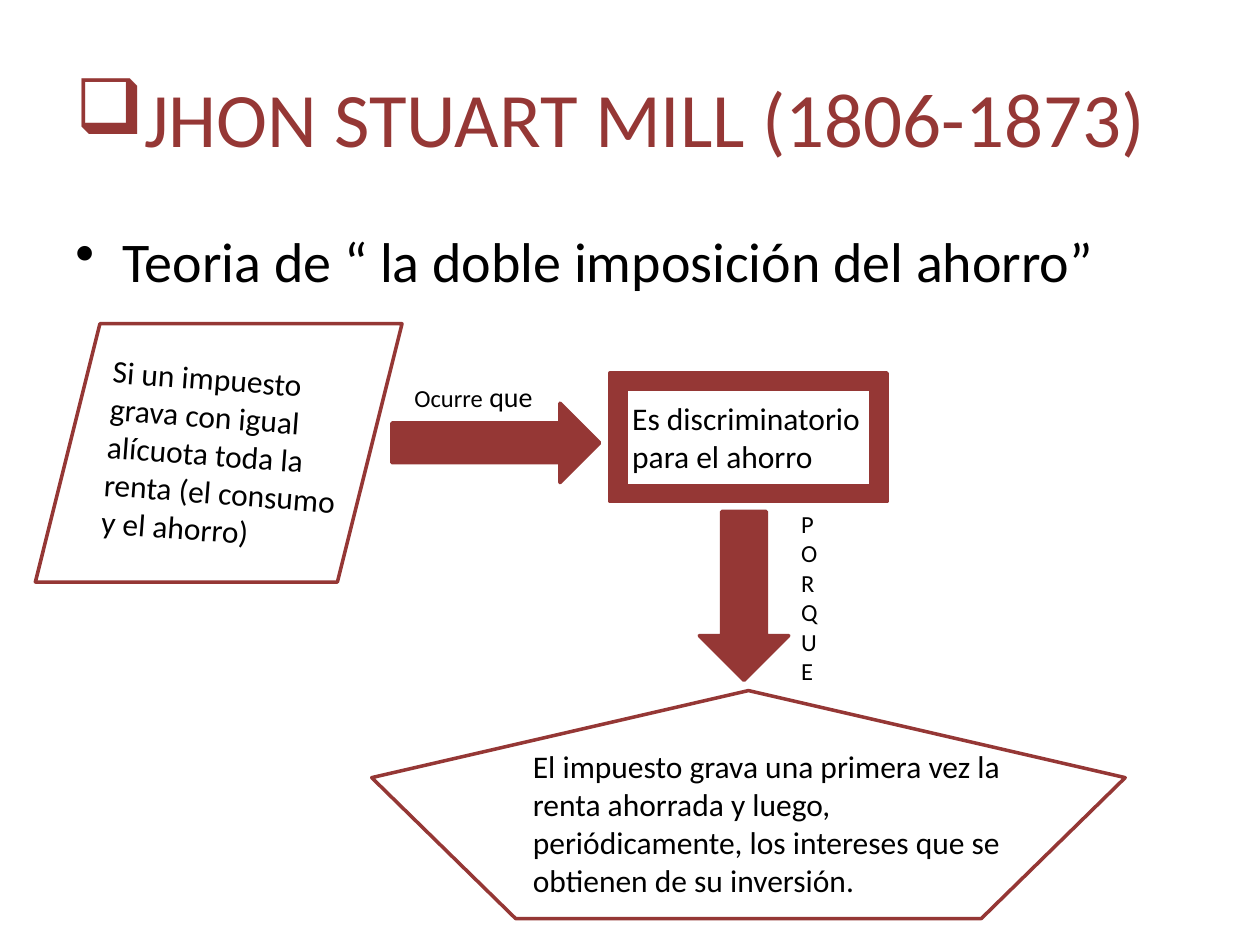
from lxml.etree import SubElement
from pptx import Presentation
from pptx.dml.color import RGBColor
from pptx.enum.shapes import MSO_SHAPE as SHAPE
from pptx.enum.text import MSO_ANCHOR as ANCHOR
from pptx.oxml.ns import qn
from pptx.util import Pt

RED = RGBColor(0x95, 0x37, 0x35)
BLACK = RGBColor(0, 0, 0)
FONT = "Calibri"

# Boxes are left, top, width, height in points.
TITLE = ("JHON STUART MILL (1806-1873)", (36, 21.6, 648, 90))
THEORY = ("Teoria de “ la doble imposición del ahorro”", (36, 126, 648, 104.4))
PREMISE = ("Si un impuesto grava con igual alícuota toda la renta (el consumo y el ahorro)",
           (54, 202.3, 147.6, 116.6))
VERDICT = ("Es discriminatorio para el ahorro", (354.2, 224.6, 158.4, 51.1))
REASON = ("El impuesto grava una primera vez la renta ahorrada y luego, periódicamente, "
          "los intereses que se obtienen de su inversión.", (297.4, 423.4, 294.5, 94.3))
OCCURS = ([("Ocurre", 14), (" que", 16)], (229.7, 213.1, 136.1, 26.6))
BECAUSE = ("\n".join("PORQUE"), (450.7, 287.3, 33.8, 131))

# Preset shape, box, filled or outline only.
FIGURES = [
    (SHAPE.RIGHT_ARROW, (223.9, 230.4, 118.8, 45.4), True),
    (SHAPE.DOWN_ARROW, (399.6, 292.3, 51.1, 96.5), True),
    (SHAPE.REGULAR_PENTAGON, (212.4, 394.6, 430.6, 130.3), False),
    (SHAPE.FRAME, (348.5, 213.1, 158.4, 73.4), True),
    (SHAPE.PARALLELOGRAM, (20.2, 185, 209.5, 147.6), False),
]


def points(box):
    return [Pt(length) for length in box]


def add_figure(slide, preset, box, filled):
    figure = slide.shapes.add_shape(preset, *points(box))
    figure.shadow.inherit = False
    if filled:
        figure.fill.solid()
        figure.fill.fore_color.rgb = RED
    else:
        figure.fill.background()
    figure.line.color.rgb = RED
    figure.line.width = Pt(2)


def add_text(slide, content, box, size=18, color=BLACK, anchor=ANCHOR.TOP,
             bullet=None, hanging=0, rotation=0):
    """Content is a string, one paragraph a line, or one line of (text, size) runs."""
    text_box = slide.shapes.add_textbox(*points(box))
    text_box.rotation = rotation
    frame = text_box.text_frame
    frame.word_wrap = True
    frame.vertical_anchor = anchor
    if isinstance(content, str):
        lines = [[(line, size)] for line in content.split("\n")]
    else:
        lines = [content]
    for index, line in enumerate(lines):
        paragraph = frame.add_paragraph() if index else frame.paragraphs[0]
        for words, run_size in line:
            run = paragraph.add_run()
            run.text = words
            run.font.name = FONT
            run.font.size = Pt(run_size)
            run.font.color.rgb = color
        if bullet:
            properties = paragraph._p.get_or_add_pPr()
            properties.set("marL", str(Pt(hanging)))
            properties.set("indent", str(Pt(-hanging)))
            SubElement(properties, qn("a:buChar"), char=bullet)


def main():
    deck = Presentation()
    deck.slide_width, deck.slide_height = Pt(720), Pt(540)
    slide = deck.slides.add_slide(deck.slide_layouts[6])

    for figure in FIGURES:
        add_figure(slide, *figure)

    add_text(slide, *TITLE, size=44, color=RED, anchor=ANCHOR.MIDDLE, bullet="❑")
    add_text(slide, *THEORY, size=32, bullet="•", hanging=27)
    add_text(slide, *PREMISE, rotation=4.4)
    add_text(slide, *VERDICT)
    add_text(slide, *OCCURS)
    add_text(slide, *BECAUSE, size=14)
    add_text(slide, *REASON)

    deck.save("out.pptx")


if __name__ == "__main__":
    main()
